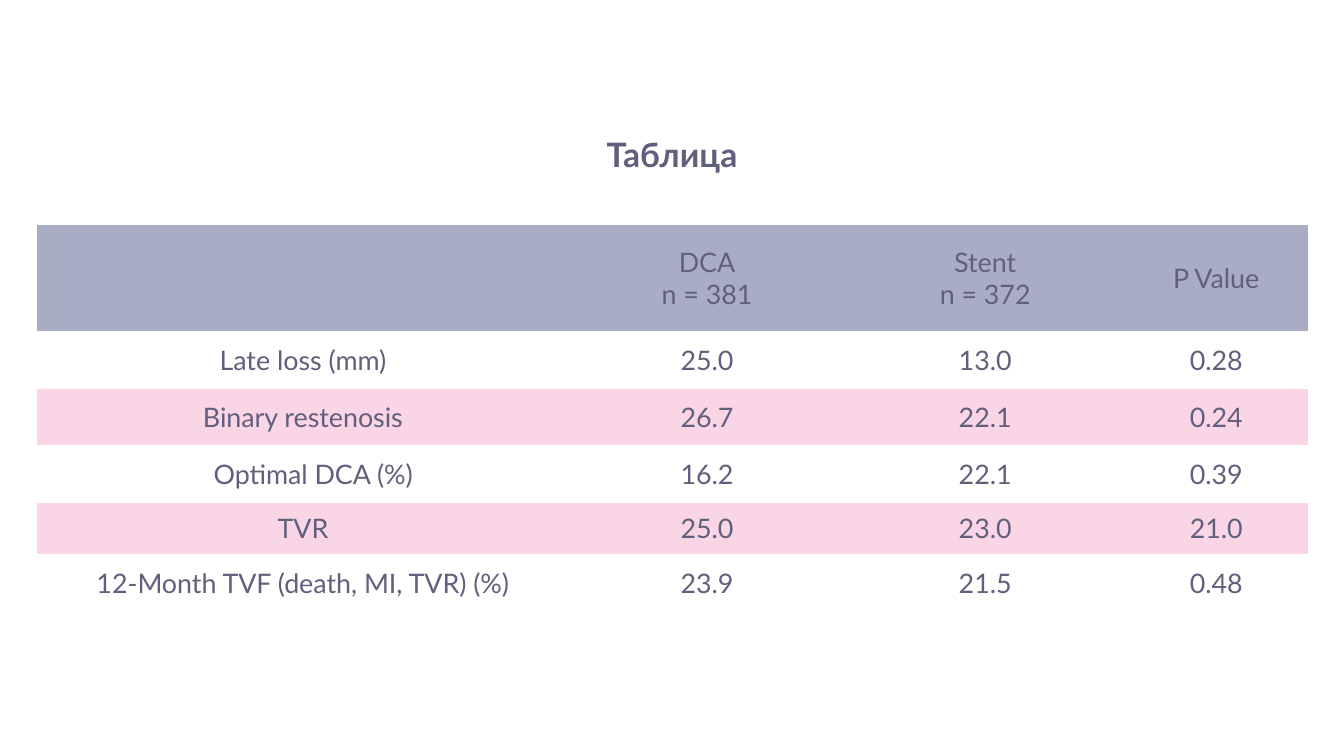
from pptx import Presentation
from pptx.dml.color import RGBColor
from pptx.enum import text
from pptx.util import Inches, Pt

INK, HEADER, STRIPE = "60607D", "A8ADC4", "FAD5E5"
NO_GRID_STYLE = "{2D5ABB26-0587-4C30-8999-92F81FD0307C}"


def color(value):
    return RGBColor.from_string(value)


def style_text(frame, size, bold=False):
    """Centre the text and give every run the slide's font."""
    for para in frame.paragraphs:
        para.alignment = text.PP_ALIGN.CENTER
        para.font.size = Pt(size)
        for span in para.runs:
            span.font.name = "Lato"
            span.font.size = Pt(size)
            span.font.bold = bold
            span.font.color.rgb = color(INK)


deck = Presentation()
deck.slide_width, deck.slide_height = Inches(11.11), Inches(6.25)
page = deck.slides.add_slide(deck.slide_layouts[6])

title = page.shapes.add_textbox(0, Inches(1), Inches(11.11), Inches(0.59)).text_frame
title.word_wrap = True
title.vertical_anchor = text.MSO_ANCHOR.MIDDLE
title.margin_left = title.margin_right = Inches(0.05)
title.text = "Таблица"
title.paragraphs[0].line_spacing = 0.9
style_text(title, 20, bold=True)

results = [
    ["", "DCA\vn = 381", "Stent\vn = 372", "P Value"],
    ["Late loss (mm)", "25.0", "13.0", "0.28"],
    ["Binary restenosis", "26.7", "22.1", "0.24"],
    ["Optimal DCA (%)", "16.2", "22.1", "0.39"],
    ["TVR", "25.0", "23.0", "21.0"],
    ["12-Month TVF (death, MI, TVR) (%)", "23.9", "21.5", "0.48"],
]
column_widths = [4.39, 2.29, 2.31, 1.51]
row_heights = [0.88, 0.48, 0.46, 0.48, 0.42, 0.48]

table = page.shapes.add_table(
    len(results), len(column_widths), Inches(0.31), Inches(1.86),
    Inches(sum(column_widths)), Inches(sum(row_heights))).table
table.horz_banding = False
table.first_row = False
table._tbl.tblPr[0].text = NO_GRID_STYLE
for column, width in zip(table.columns, column_widths):
    column.width = Inches(width)

for row_number, (row, height) in enumerate(zip(results, row_heights)):
    table.rows[row_number].height = Inches(height)
    for column_number, value in enumerate(row):
        cell = table.cell(row_number, column_number)
        cell.text = value
        cell.vertical_anchor = text.MSO_ANCHOR.MIDDLE
        cell.margin_left = cell.margin_right = Inches(0.11)
        cell.margin_top = cell.margin_bottom = Inches(0.06)
        if row_number % 2:
            cell.fill.background()
        else:
            cell.fill.solid()
            cell.fill.fore_color.rgb = color(STRIPE if row_number else HEADER)
        style_text(cell.text_frame, 16)

# The "Optimal DCA" label sits slightly right of its column's centre.
table.cell(3, 0).margin_left = Inches(0.28)

deck.save("out.pptx")
